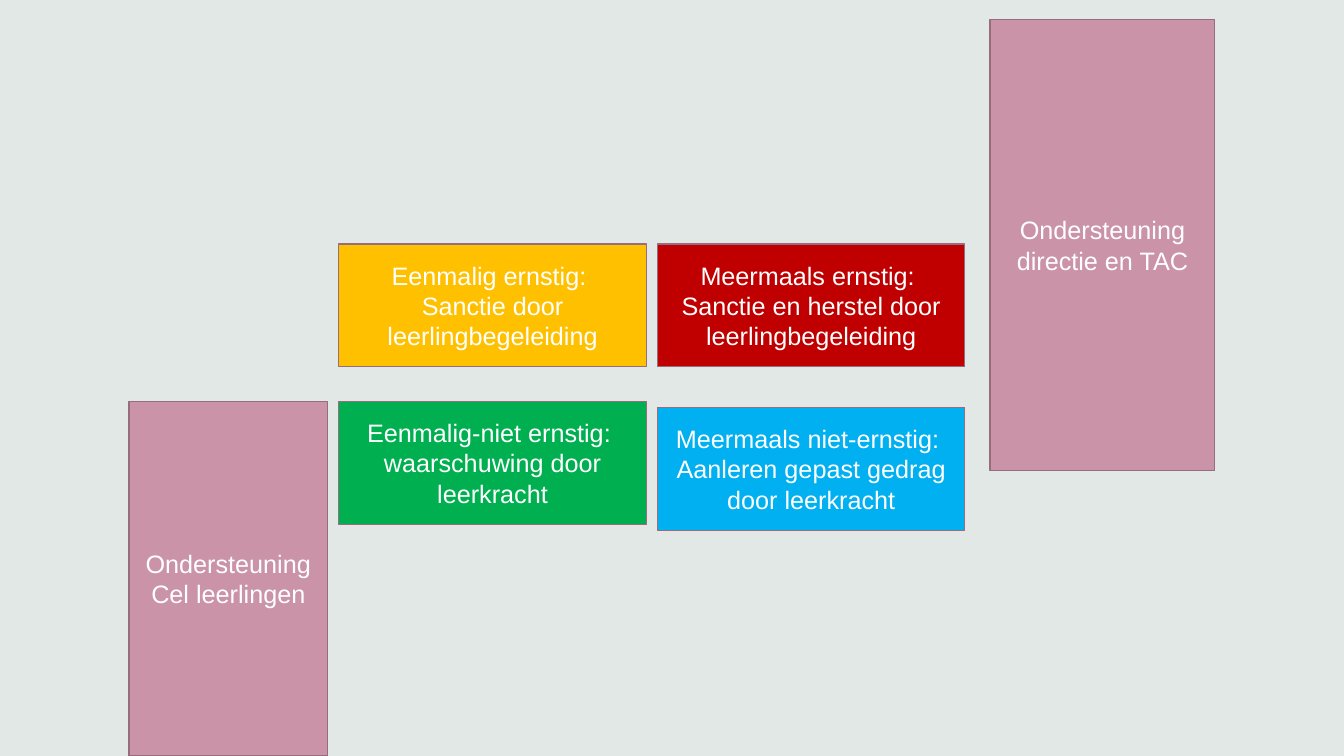
from dataclasses import dataclass

from pptx import Presentation
from pptx.dml.color import RGBColor
from pptx.enum.shapes import MSO_SHAPE as Preset
from pptx.enum.text import MSO_ANCHOR as Anchor, PP_ALIGN as Align
from pptx.util import Inches, Pt


@dataclass(frozen=True)
class Theme:
    background: str = "E2E8E6"
    support: str = "CA93A7"
    outline: str = "956D7C"
    text: str = "FFFFFF"
    green: str = "00B050"
    blue: str = "00B0F0"
    amber: str = "FFC000"
    red: str = "C00000"
    font: str = "Arial"
    size: float = 18
    line: float = 0.85


theme = Theme()


def color(value):
    return RGBColor.from_string(value)


def add_box(page, left, top, width, height, fill, lines):
    box = page.shapes.add_shape(
        Preset.RECTANGLE, Inches(left), Inches(top), Inches(width), Inches(height))
    box.shadow.inherit = False
    box.fill.solid()
    box.fill.fore_color.rgb = color(fill)
    box.line.color.rgb = color(theme.outline)
    box.line.width = Pt(theme.line)
    frame = box.text_frame
    frame.word_wrap = True
    frame.vertical_anchor = Anchor.MIDDLE
    for index, line in enumerate(lines):
        para = frame.add_paragraph() if index else frame.paragraphs[0]
        para.alignment = Align.CENTER
        span = para.add_run()
        span.text = line
        span.font.name = theme.font
        span.font.size = Pt(theme.size)
        span.font.color.rgb = color(theme.text)


# Deck and background
deck = Presentation()
deck.slide_width, deck.slide_height = Inches(13.33), Inches(7.5)
page = deck.slides.add_slide(deck.slide_layouts[6])
page.background.fill.solid()
page.background.fill.fore_color.rgb = color(theme.background)

# Behaviour matrix: once or repeatedly, minor or serious
once, repeatedly = 3.36, 6.52
cell_width, cell_height = 3.05, 1.22
measures = [
    (once, 3.98, theme.green,
     ["Eenmalig-niet ernstig: ", "waarschuwing door leerkracht"]),
    (repeatedly, 4.04, theme.blue,
     ["Meermaals niet-ernstig: ", "Aanleren gepast gedrag door leerkracht"]),
    (once, 2.42, theme.amber,
     ["Eenmalig ernstig: ", "Sanctie door leerlingbegeleiding"]),
    (repeatedly, 2.42, theme.red,
     ["Meermaals ernstig: ", "Sanctie en herstel door leerlingbegeleiding"]),
]
for left, top, fill, lines in measures:
    add_box(page, left, top, cell_width, cell_height, fill, lines)

# Support columns on either side
add_box(page, 9.82, 0.19, 2.23, 4.48, theme.support, ["Ondersteuning directie en TAC"])
add_box(page, 1.28, 3.98, 1.97, 3.52, theme.support, ["Ondersteuning", "Cel leerlingen"])

deck.save("out.pptx")
